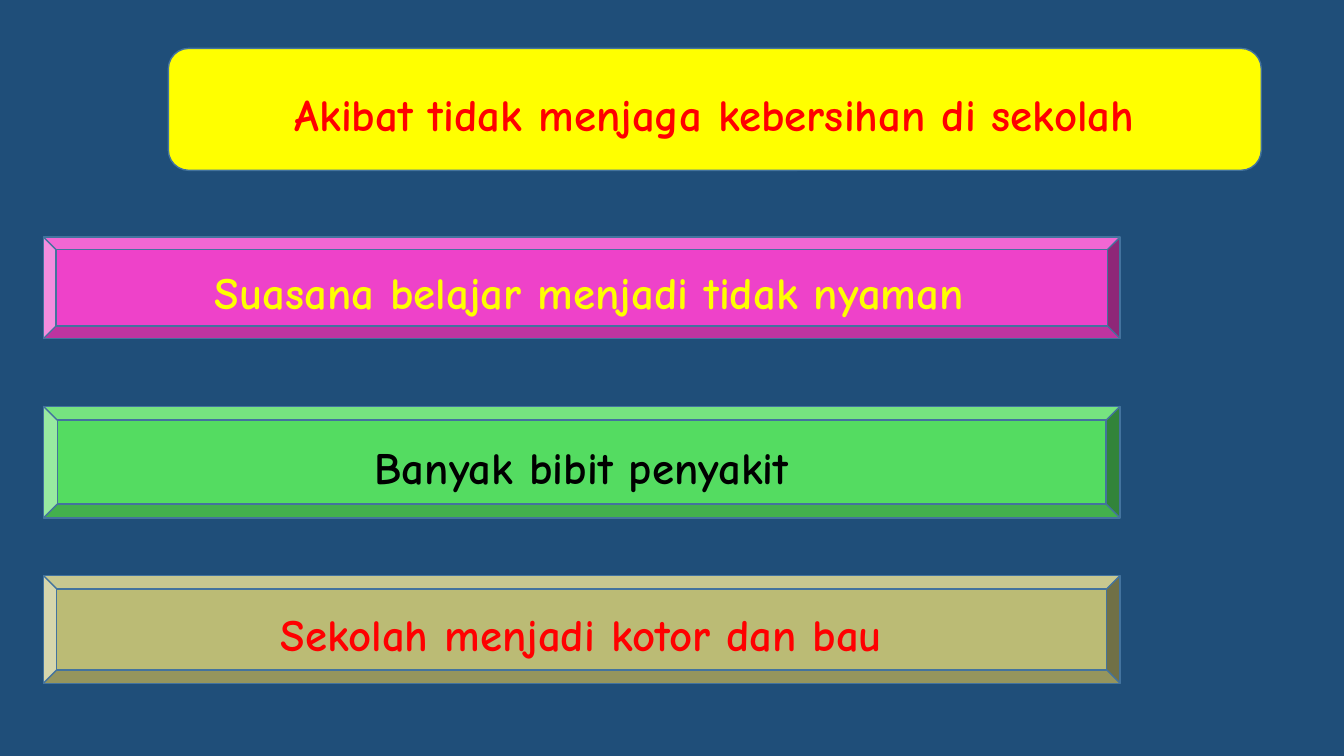
from dataclasses import dataclass

from pptx import Presentation
from pptx.dml.color import RGBColor
from pptx.enum.shapes import MSO_SHAPE
from pptx.enum.text import MSO_ANCHOR, PP_ALIGN
from pptx.util import Inches, Pt


@dataclass(frozen=True)
class Theme:
    """Colours and type of the slide."""
    navy: str = "1F4E79"
    outline: str = "43739E"
    yellow: str = "FFFF00"
    red: str = "FF0000"
    black: str = "000000"
    pink: str = "EE42C9"
    green: str = "54DC61"
    khaki: str = "BBBB75"
    font: str = "Comic Neue"
    size: int = 32
    spacing: float = 1.15


THEME = Theme()


def add_panel(slide, kind, box, text, fill, color, after=0):
    """Place a filled panel with one centred line of text in the box."""
    sp = slide.shapes.add_shape(kind, *(Inches(v) for v in box))
    sp.shadow.inherit = False
    sp.fill.solid()
    sp.fill.fore_color.rgb = RGBColor.from_string(fill)
    sp.line.color.rgb = RGBColor.from_string(THEME.outline)
    sp.line.width = Pt(1)
    tf = sp.text_frame
    tf.word_wrap = True
    tf.vertical_anchor = MSO_ANCHOR.MIDDLE
    p = tf.paragraphs[0]
    p.alignment = PP_ALIGN.CENTER
    p.line_spacing = THEME.spacing
    p.space_after = Pt(after)
    r = p.add_run()
    r.text = text
    r.font.name = THEME.font
    r.font.size = Pt(THEME.size)
    r.font.bold = True
    r.font.color.rgb = RGBColor.from_string(color)


def add_title(slide, box):
    """Fill the box with the rounded title panel."""
    add_panel(slide, MSO_SHAPE.FLOWCHART_ALTERNATE_PROCESS, box,
              "Akibat tidak menjaga kebersihan di sekolah",
              THEME.yellow, THEME.red)


def add_effects(slide, box):
    """Stack the bevelled effect bars at an equal pitch in the box."""
    left, top, width, height = box
    bars = [
        (" Suasana belajar menjadi tidak nyaman", THEME.pink, THEME.yellow, 1.01, 0),
        ("Banyak bibit penyakit", THEME.green, THEME.black, 1.11, 0),
        ("Sekolah menjadi kotor dan bau", THEME.khaki, THEME.red, 1.07, 10),
    ]
    pitch = (height - bars[-1][3]) / (len(bars) - 1)
    for i, (text, fill, color, bar_height, after) in enumerate(bars):
        bar = (left, top + i * pitch, width, bar_height)
        add_panel(slide, MSO_SHAPE.BEVEL, bar, text, fill, color, after)


def main():
    """Build and save the slide."""
    prs = Presentation()
    prs.slide_width, prs.slide_height = Inches(13.33), Inches(7.5)
    slide = prs.slides.add_slide(prs.slide_layouts[6])
    slide.background.fill.solid()
    slide.background.fill.fore_color.rgb = RGBColor.from_string(THEME.navy)
    add_title(slide, (1.67, 0.48, 10.84, 1.21))
    add_effects(slide, (0.43, 2.35, 10.68, 4.43))
    prs.save("out.pptx")


if __name__ == "__main__":
    main()
